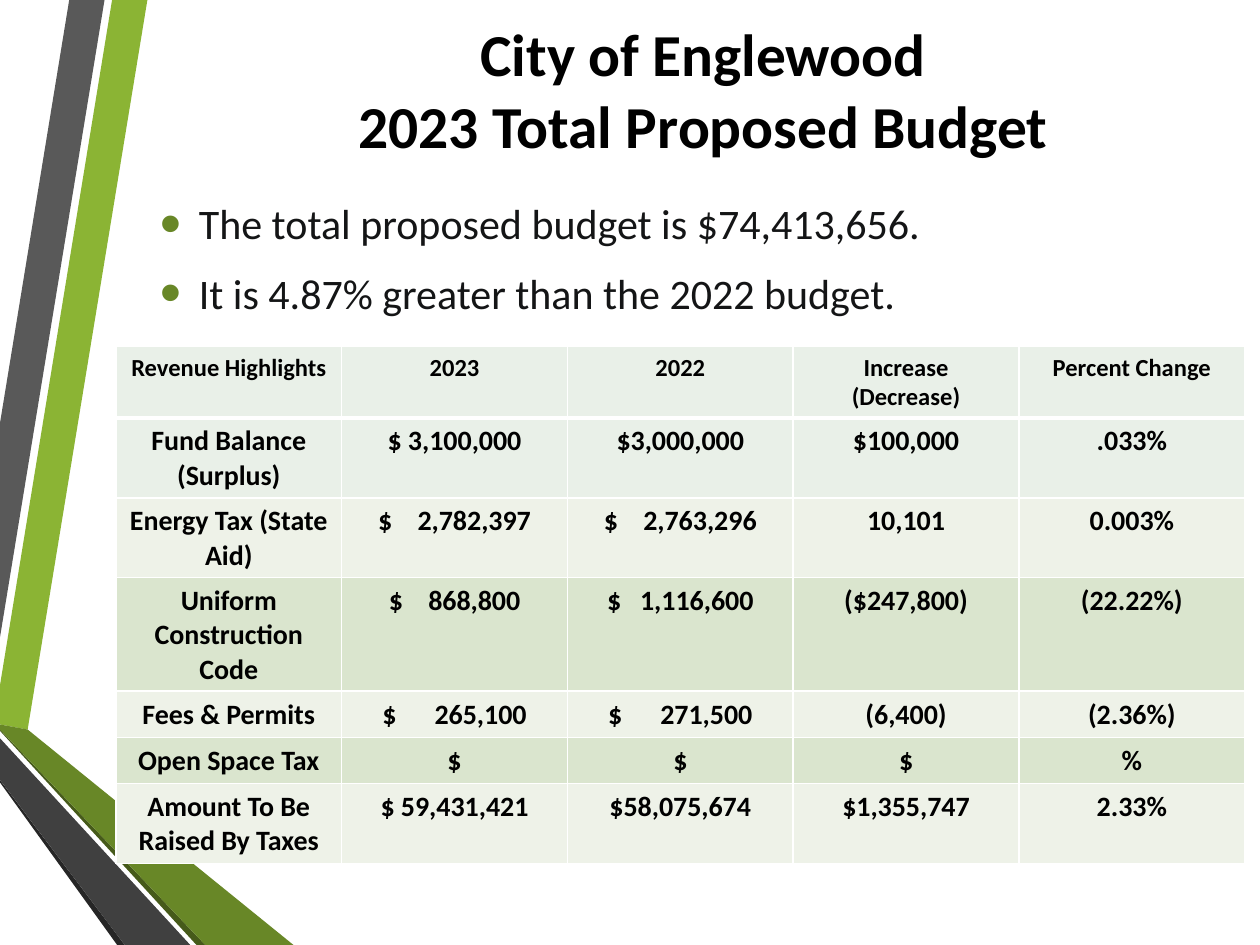
import pptx
import pptx.util
import pptx.dml.color
import pptx.enum.text
import pptx.oxml
import pptx.oxml.ns
import lxml.etree

Inches = pptx.util.Inches
Pt = pptx.util.Pt
CENTER = pptx.enum.text.PP_ALIGN.CENTER
MIDDLE = pptx.enum.text.MSO_ANCHOR.MIDDLE
FONT = "Calibri"
SPACE_WIDTH = 0.226

RIBBONS = [
    ("8BB434", [(0, 5.44), (0, 5.75), (0.22, 5.79), (1.17, 0), (0.89, 0)]),
    ("595959", [(0.83, 0), (0.55, 0), (0, 3.36), (0, 5.06)]),
    ("262626", [(0, 6.19), (0, 6.21), (0.93, 7.5), (0.99, 7.5)]),
    ("465A1A", [(0, 5.79), (0, 5.8), (1.56, 7.5), (1.63, 7.5)]),
    ("688727", [(0, 5.79), (1.63, 7.5), (2.33, 7.5), (0.22, 5.79), (0, 5.75)]),
    ("404040", [(0, 6.19), (0.99, 7.5), (1.51, 7.5), (0, 5.86)]),
]

BUDGET_ROWS = [
    (0.52, "E9F0E8", ["Revenue Highlights", "2023", "2022", "Increase\n(Decrease)", "Percent Change"]),
    (0.58, "E9F0E8", ["Fund Balance (Surplus)", "$ 3,100,000", "$3,000,000", "$100,000", ".033%"]),
    (0.58, "EEF2E8", ["Energy Tax (State Aid)", "$ 2,782,397", "$ 2,763,296", "10,101", "0.003%"]),
    (0.82, "DAE5CE", ["Uniform Construction Code", "$ 868,800", "$ 1,116,600", "($247,800)", "(22.22%)"]),
    (0.34, "EEF2E8", ["Fees & Permits", "$ 265,100", "$ 271,500", "(6,400)", "(2.36%)"]),
    (0.34, "DAE5CE", ["Open Space Tax", "$", "$", "$", "%"]),
    (0.58, "EEF2E8", ["Amount To Be Raised By Taxes", "$ 59,431,421", "$58,075,674", "$1,355,747", "2.33%"]),
]
DOLLAR_GAPS = {(2, 1): 4, (2, 2): 4, (3, 1): 4, (3, 2): 3, (4, 1): 6, (4, 2): 6}


def color(value):
    return pptx.dml.color.RGBColor.from_string(value)


def add_child(parent, tag, **attributes):
    return lxml.etree.SubElement(parent, pptx.oxml.ns.qn(tag), attributes)


def style_span(span, size, value, bold=False):
    span.font.name = FONT
    span.font.size = Pt(size)
    span.font.bold = bold
    span.font.color.rgb = color(value)


def add_text_frame(page, left, top, width, height):
    box = page.shapes.add_textbox(Inches(left), Inches(top), Inches(width), Inches(height))
    frame = box.text_frame
    frame.word_wrap = True
    frame.vertical_anchor = MIDDLE
    return frame


def add_ribbons(page, left, top):
    for fill, points in RIBBONS:
        corners = [(Inches(left + x), Inches(top + y)) for x, y in points]
        builder = page.shapes.build_freeform(*corners[0])
        builder.add_line_segments(corners[1:], close=True)
        ribbon = builder.convert_to_shape()
        ribbon.shadow.inherit = False
        ribbon.fill.solid()
        ribbon.fill.fore_color.rgb = color(fill)
        ribbon.line.fill.background()


def add_title(page, left, top, width, height):
    frame = add_text_frame(page, left, top, width, height)
    para = frame.paragraphs[0]
    para.text = "City of Englewood\v2023 Total Proposed Budget"
    para.alignment = CENTER
    for span in para.runs:
        style_span(span, 34, "000000", True)


def add_bullets(page, left, top, width, height):
    frame = add_text_frame(page, left, top, width, height)
    frame.text = "The total proposed budget is $74,413,656.\nIt is 4.87% greater than the 2022 budget."
    for para in frame.paragraphs:
        para.space_before = Pt(4.8)
        para.space_after = Pt(6)
        style_span(para.runs[0], 24, "141516")
        properties = para._p.get_or_add_pPr()
        properties.set("marL", str(Inches(0.31)))
        properties.set("indent", str(-Inches(0.31)))
        add_child(add_child(properties, "a:buClr"), "a:srgbClr", val="688727")
        add_child(properties, "a:buSzPct", val="145000")
        add_child(properties, "a:buFont", typeface="Arial")
        add_child(properties, "a:buChar", char="•")


def set_borders(cell, top, bottom):
    properties = cell._tc.get_or_add_tcPr()
    for tag, width in (("a:lnL", 1), ("a:lnR", 1), ("a:lnT", top), ("a:lnB", bottom)):
        line = add_child(properties, tag, w=str(Pt(width)))
        add_child(add_child(line, "a:solidFill"), "a:srgbClr", val="FFFFFF")


def widen_dollar_gap(para, spaces, size):
    dollar, amount = para.text.split(" ")
    para.text = dollar
    gap = para.add_run()
    gap.text = " "
    extra = round((spaces - 1) * SPACE_WIDTH * size * 100)
    gap._r.get_or_add_rPr().set("spc", str(extra))
    para.add_run().text = amount


def fill_cell(cell, text, size, fill, gap):
    cell.fill.solid()
    cell.fill.fore_color.rgb = color(fill)
    cell.text_frame.text = text
    if gap:
        widen_dollar_gap(cell.text_frame.paragraphs[0], gap, size)
    for para in cell.text_frame.paragraphs:
        para.alignment = CENTER
        for span in para.runs:
            style_span(span, size, "000000", True)


def add_budget_table(page, left, top, width):
    height = sum(row[0] for row in BUDGET_ROWS)
    columns = len(BUDGET_ROWS[0][2])
    frame = page.shapes.add_table(
        len(BUDGET_ROWS), columns, Inches(left), Inches(top), Inches(width), Inches(height)
    )
    table = frame.table
    table.first_row = False
    table.horz_banding = False
    for row, (row_height, fill, texts) in enumerate(BUDGET_ROWS):
        table.rows[row].height = Inches(row_height)
        for column, text in enumerate(texts):
            cell = table.cell(row, column)
            set_borders(cell, 3 if row == 1 else 1, 3 if row == 0 else 1)
            fill_cell(cell, text, 14 if row == 0 else 16, fill, DOLLAR_GAPS.get((row, column)))


def main():
    deck = pptx.Presentation()
    deck.slide_width = Inches(10)
    deck.slide_height = Inches(7.5)
    page = deck.slides.add_slide(deck.slide_layouts[6])
    add_ribbons(page, 0, 0)
    add_title(page, 1.04, 0.08, 9.08, 1.25)
    add_bullets(page, 1.17, 1.42, 8.83, 1.25)
    add_budget_table(page, 0.92, 2.75, 8.96)
    deck.save("out.pptx")


if __name__ == "__main__":
    main()
